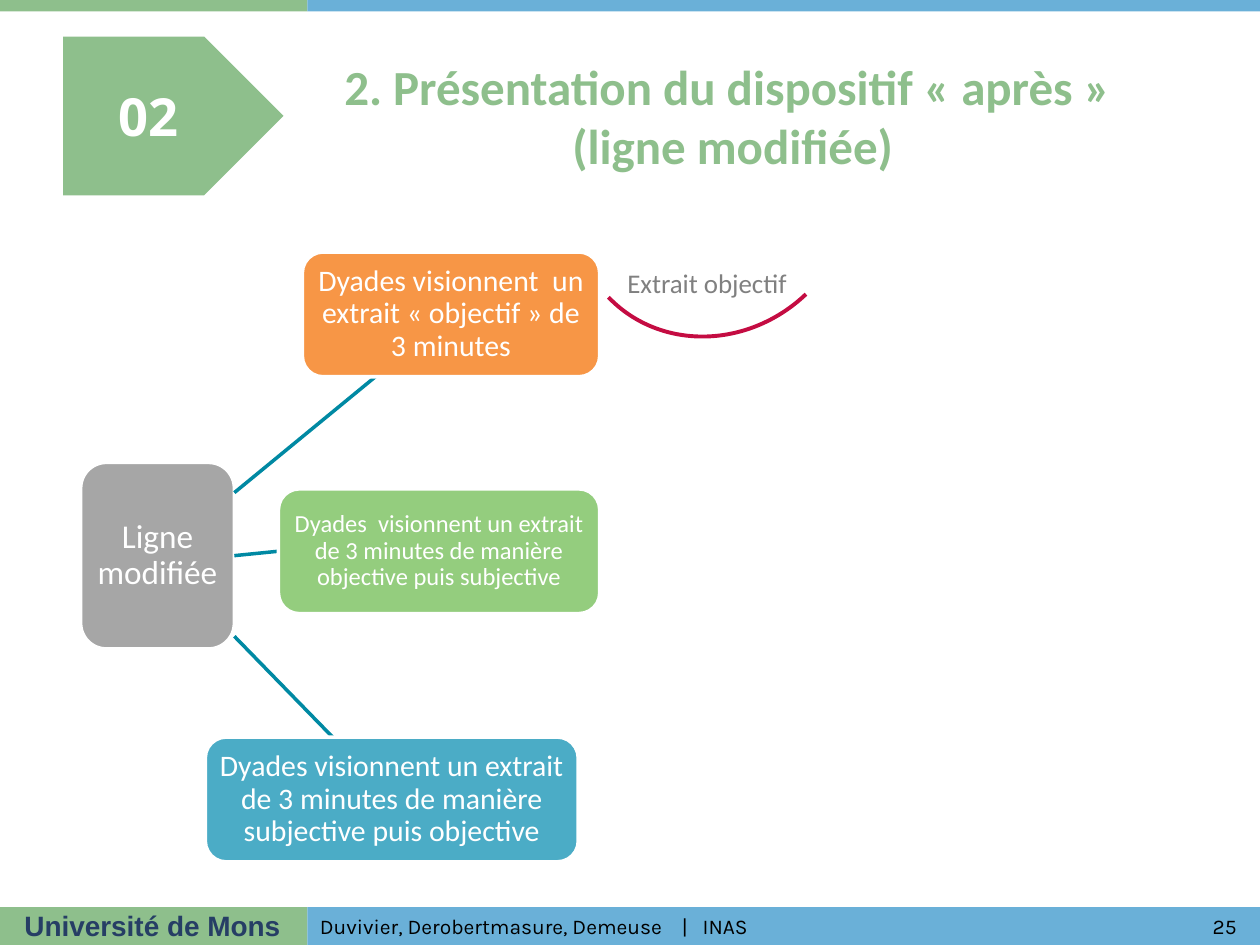
from lxml import etree
from pptx import Presentation
from pptx import util as u
from pptx.dml.color import RGBColor
from pptx.enum import shapes, text
from pptx.oxml.ns import qn

deck = Presentation()
deck.slide_width, deck.slide_height = u.Inches(10), u.Inches(7.5)
col, row = deck.slide_width / 100, deck.slide_height / 75
slide = deck.slides.add_slide(deck.slide_layouts[5])
items = slide.shapes
kind = shapes.MSO_SHAPE
mid, left = text.PP_ALIGN.CENTER, text.PP_ALIGN.LEFT
green, blue, white = "8EBF8C", "6AB0D8", "FFFFFF"


def draw(form, place, fill=None, edge=None, wide=2):
    x, y, w, h = place
    size = [round(v) for v in (x * col, y * row, w * col, h * row)]
    if form is None:
        return items.add_textbox(*size)
    shape = items.add_shape(form, *size)
    shape.shadow.inherit = False
    if fill:
        shape.fill.solid()
        shape.fill.fore_color.rgb = RGBColor.from_string(fill)
    else:
        shape.fill.background()
    if edge:
        shape.line.color.rgb = RGBColor.from_string(edge)
        shape.line.width = u.Pt(wide)
    else:
        shape.line.fill.background()
    return shape


def write(shape, words, face, size, tint, bold=False, side=mid, lead=None, pad=None,
          hold=text.MSO_ANCHOR.MIDDLE):
    frame = shape.text_frame
    frame.text = words
    frame.word_wrap = True
    frame.vertical_anchor = hold
    if pad:
        frame.margin_left = frame.margin_right = u.Inches(pad)
        frame.margin_top = frame.margin_bottom = u.Inches(pad)
    line = frame.paragraphs[0]
    line.alignment = side
    if lead:
        line.line_spacing = lead
    line.font.name, line.font.size, line.font.bold = face, u.Pt(size), bold
    line.font.color.rgb = RGBColor.from_string(tint)


split = 24.4
for top, high in [(0, 0.9), (72, 3)]:
    draw(kind.RECTANGLE, (0, top, split, high), green)
    draw(kind.RECTANGLE, (split, top, 100 - split, high), blue)

high = text.MSO_ANCHOR.TOP
write(draw(None, (-0.1, 71.6, split, 3.7)), "Université de Mons", "Arial", 16, "263E65", True, hold=high)
write(draw(None, (94.4, 72, 5.6, 3)), "25", "Karla", 12, "000000")
write(draw(None, (split, 72, 70, 3)), "Duvivier, Derobertmasure, Demeuse    |   INAS",
      "Karla", 12, "000000", side=left)

root = draw(kind.ROUNDED_RECTANGLE, (6.4, 36.7, 12.2, 14.8), "A6A6A6", white)
write(root, "Ligne modifiée", "Calibri", 19, white, lead=0.9, pad=0.05)

steps = [
    ((24, 20, 23.6, 9.9), "F79646", 17, (39.1, 29.8, 29.9),
     "Dyades visionnent  un extrait «\u00a0objectif\u00a0» de 3 minutes"),
    ((22.1, 38.8, 25.5, 9.9), "94CD7E", 14, None,
     "Dyades  visionnent un extrait de 3 minutes de manière objective puis subjective"),
    ((16.3, 58.5, 29.6, 9.9), "4BACC6", 17, (50.5, 26.4, 58.5),
     "Dyades visionnent un extrait de 3 minutes de manière subjective puis objective"),
]
for place, fill, size, ends, words in steps:
    start, right, stop = ends or (44, 22.1, 44)
    link = items.add_connector(shapes.MSO_CONNECTOR.STRAIGHT, round(18.6 * col),
                               round(start * row), round(right * col), round(stop * row))
    link.line.color.rgb = RGBColor.from_string("0089A3")
    link.line.width = u.Pt(2)
    etree.SubElement(link._element.spPr, qn("a:effectLst"))
    step = draw(kind.ROUNDED_RECTANGLE, place, fill, white)
    write(step, words, "Calibri", size, white, lead=0.9, pad=0.05)
    if not ends:
        link.begin_connect(root, 3)
        link.end_connect(step, 1)

curve = draw(kind.ARC, (45.1, 5, 23, 21.3), edge="C40C42", wide=2.25)
curve.rotation = 136.3
write(draw(None, (48.8, 21.2, 15.5, 3.7)), "Extrait objectif", "Calibri", 15.4, "808080",
      side=left, lead=0.8, hold=high)

draw(kind.PENTAGON, (5, 2.9, 17.5, 12.6), green)
write(draw(None, (5.8, 6.2, 11.9, 6.1)), "02", "Open Sans", 30, white, True, hold=high)

title = items.title
title.left, title.top = round(21.9 * col), round(2.9 * row)
title.width, title.height = round(72.5 * col), round(12.5 * row)
write(title, "2. Présentation du dispositif «\u00a0après\u00a0» \v(ligne modifiée)",
      "Calibri", 28, green, True)

deck.save("out.pptx")
